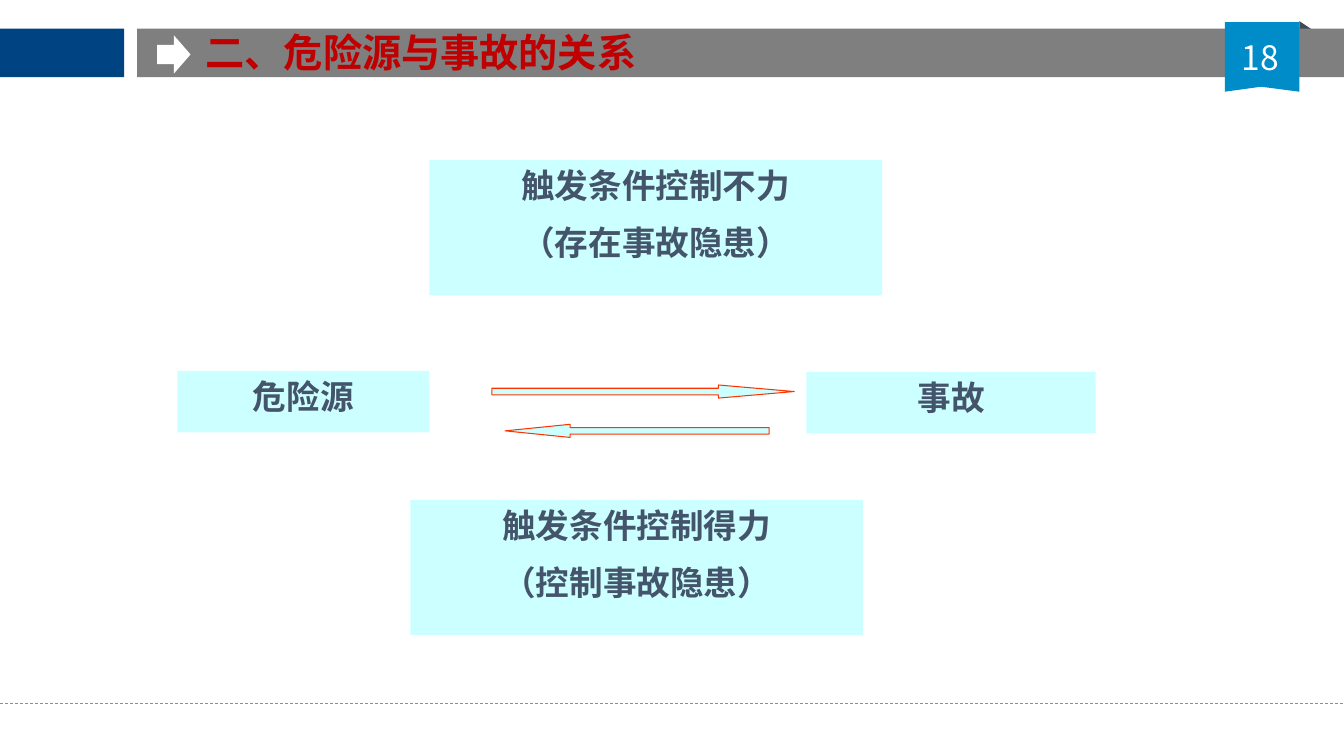
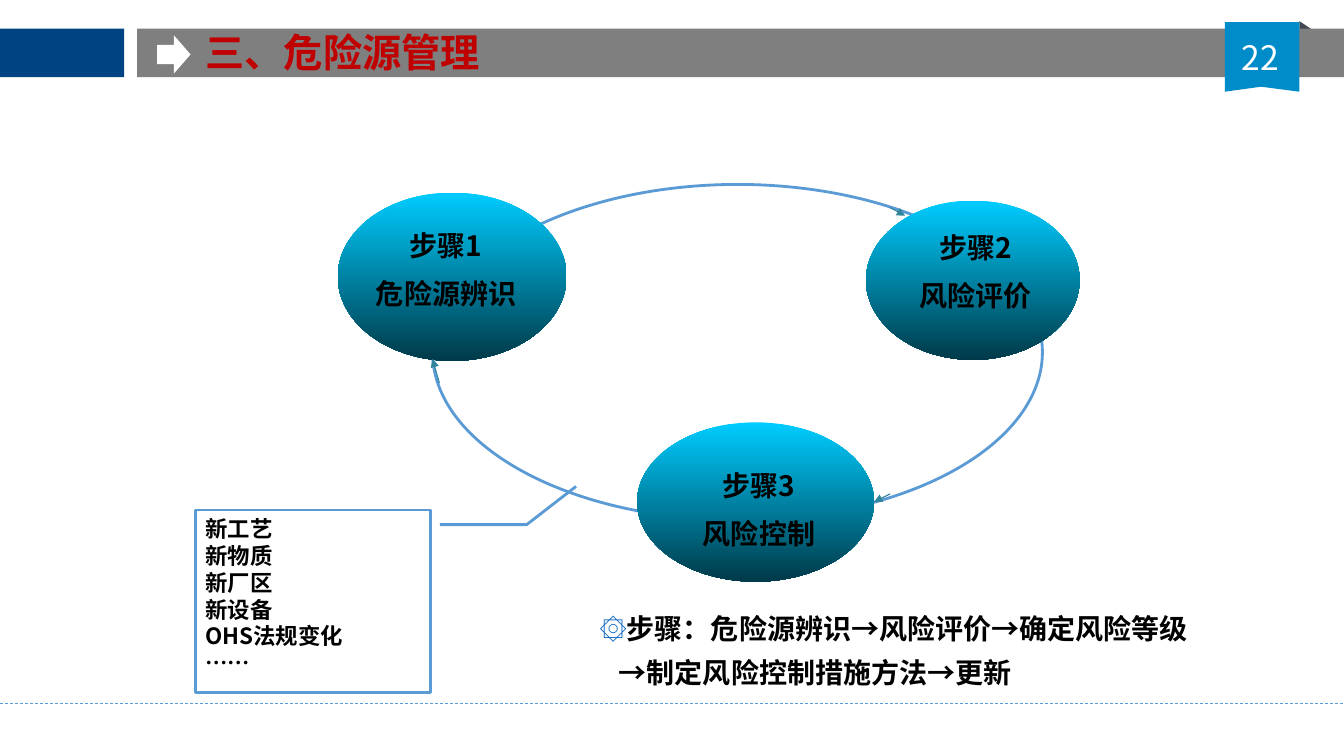
from lxml.etree import SubElement
from pptx import Presentation
from pptx.dml.color import RGBColor
from pptx.enum.dml import MSO_LINE_DASH_STYLE as Dash
from pptx.enum.shapes import MSO_CONNECTOR as Connector, MSO_SHAPE as Kind
from pptx.enum.text import MSO_ANCHOR as Anchor, MSO_AUTO_SIZE as AutoSize, PP_ALIGN as Align
from pptx.oxml.ns import qn
from pptx.util import Inches, Pt

COLORS = {name: RGBColor.from_string(value) for name, value in {
    "navy": "004383", "gray": "7F7F7F", "ribbon": "008CC8", "fold": "222A35",
    "white": "FFFFFF", "black": "000000", "title": "C00000", "slate": "44546A",
    "aqua": "CCFFFF", "orange": "FF3300", "blue": "5B9BD5", "teal": "31859C",
    "cyan": "00CCFF", "deep": "003A49", "bullet": "0563C1"}.items()}
CJK, LATIN = "Noto Sans CJK SC", "Calibri"

presentation = Presentation()
presentation.slide_width, presentation.slide_height = Inches(13.33), Inches(7.5)
# The grid has 100 columns and 100 rows
COLUMN, ROW = presentation.slide_width / 100, presentation.slide_height / 100


def add_block(slide, kind, box, fill=None, line=None, weight=0.75, adjustments=()):
    """Add a preset shape, or a text box when kind is None; box is in columns and rows."""
    frame = [int(part * unit) for part, unit in zip(box, (COLUMN, ROW) * 2)]
    if kind is None:
        return slide.shapes.add_textbox(*frame)
    shape = slide.shapes.add_shape(kind, *frame)
    shape.shadow.inherit = False
    for index, value in enumerate(adjustments):
        shape.adjustments[index] = value
    if fill:
        shape.fill.solid()
        shape.fill.fore_color.rgb = COLORS[fill]
    else:
        shape.fill.background()
    if line:
        shape.line.color.rgb = COLORS[line]
        shape.line.width = Pt(weight)
    else:
        shape.line.fill.background()
    return shape


def write(shape, text, size, color, align=Align.CENTER, bold=True, gap=0, font=CJK):
    """Fill a shape with one paragraph per line of text."""
    frame = shape.text_frame
    frame.text = text
    frame.word_wrap, frame.auto_size = True, AutoSize.NONE
    frame.vertical_anchor = Anchor.TOP
    for index, paragraph in enumerate(frame.paragraphs):
        paragraph.alignment = align
        paragraph.space_before = Pt(gap if index else 0)
        for run in paragraph.runs:
            run.font.name, run.font.size, run.font.bold = font, Pt(size), bold
            run.font.color.rgb = COLORS[color]
    for latin in list(shape.element.iter(qn("a:latin"))):
        SubElement(latin.getparent(), qn("a:ea"), typeface=CJK)


# Slides with title and page number
layout = presentation.slide_layouts[5]
slides = []
for title, page in [("二、危险源与事故的关系", "18"), ("三、危险源管理", "22")]:
    slide = presentation.slides.add_slide(layout)
    heading = slide.shapes.title
    heading.left, heading.top = int(14.55 * COLUMN), int(3.07 * ROW)
    heading.width, heading.height = int(75.83 * COLUMN), int(7.6 * ROW)
    write(heading, title, 28, "title", Align.LEFT)
    write(add_block(slide, None, (90.23, 4.27, 7.13, 5.33)), page, 24, "white", bold=False)
    slides.append(slide)
relation, management = slides

# Shared band, ribbon and footer line, moved to the layout
fold = add_block(relation, Kind.RIGHT_TRIANGLE, (96.68, 2.8, 0.9, 1.07), "fold")
SubElement(next(fold.element.iter(qn("a:srgbClr"))), qn("a:alpha"), val="85000")
decoration = [fold,
              add_block(relation, Kind.RECTANGLE, (0, 3.8, 9.23, 6.4), "navy"),
              add_block(relation, Kind.RECTANGLE, (10.2, 3.8, 89.8, 6.4), "gray")]
outline = [(int(x * COLUMN), int(y * ROW)) for x, y in
           [(91.13, 12.13), (91.13, 2.93), (96.68, 2.93), (96.68, 12.13), (93.83, 11.47)]]
builder = relation.shapes.build_freeform(*outline[0])
builder.add_line_segments(outline[1:], close=True)
ribbon = builder.convert_to_shape()
ribbon.shadow.inherit = False
ribbon.fill.solid()
ribbon.fill.fore_color.rgb = COLORS["ribbon"]
ribbon.line.fill.background()
pointer = add_block(relation, Kind.RIGHT_ARROW, (11.7, 4.67, 2.48, 5.07), "white")
footer = relation.shapes.add_connector(
    Connector.STRAIGHT, 0, int(93.07 * ROW), presentation.slide_width, int(93.07 * ROW))
footer.line.color.rgb = COLORS["blue"]
footer.line.width, footer.line.dash_style = Pt(0.5), Dash.DASH
SubElement(footer.element.spPr, qn("a:effectLst"))
for number, shape in enumerate(decoration + [ribbon, pointer, footer], start=101):
    next(shape.element.iter(qn("p:cNvPr"))).set("id", str(number))
    layout.shapes.element.append(shape.element)

# Hazard and accident: boxes and the two arrows between them
for text, box in [
        ("危险源", (13.2, 49.07, 18.75, 8.13)),
        ("事故", (60, 49.2, 21.53, 8.13)),
        ("触发条件控制不力\n（存在事故隐患）", (31.95, 21.2, 33.68, 17.87)),
        ("触发条件控制得力\n（控制事故隐患）", (30.53, 66.13, 33.68, 17.87))]:
    write(add_block(relation, Kind.RECTANGLE, box, "aqua"), text, 24, "slate", gap=12)
for kind, box, head in [(Kind.LEFT_ARROW, (37.58, 56.13, 19.65, 1.73), 4.96),
                        (Kind.RIGHT_ARROW, (36.6, 50.93, 22.5, 1.73), 5.79)]:
    add_block(relation, kind, box, "aqua", "orange", adjustments=(0.5, head))

# Management cycle: ring, step ellipses and their labels
add_block(management, Kind.OVAL, (32.18, 24.4, 45.38, 44.4), line="blue", weight=2)
for text, ellipse_box, label_box in [
        ("步骤3\n风险控制", (47.4, 55.87, 17.63, 21.07), (48.08, 61.33, 16.8, 12.53)),
        ("步骤2\n风险评价", (64.43, 26.53, 15.9, 21.07), (64.2, 29.87, 16.8, 12.53)),
        ("步骤1\n危险源辨识", (25.13, 25.47, 17.03, 22.27), (25.13, 29.6, 16.13, 12.53))]:
    ellipse = add_block(management, Kind.OVAL, ellipse_box)
    ellipse.fill.gradient()
    ellipse.fill.gradient_angle = 270
    for stop, position, color in zip(ellipse.fill.gradient_stops, (0, 1), ("cyan", "deep")):
        stop.position = position
        stop.color.rgb = COLORS[color]
    write(add_block(management, None, label_box), text, 20, "black", gap=10)

# Arrowheads along the ring
for start_x, start_y, end_x, end_y in [(32.7, 50.67, 32.18, 47.47),
                                       (66.23, 65.33, 65.03, 66.4),
                                       (66.23, 27.47, 67.35, 28.53)]:
    arrow = management.shapes.add_connector(
        Connector.STRAIGHT, int(start_x * COLUMN), int(start_y * ROW),
        int(end_x * COLUMN), int(end_y * ROW))
    arrow.line.color.rgb = COLORS["teal"]
    arrow.line.width = Pt(0.75)
    SubElement(arrow.element.spPr.find(qn("a:ln")), qn("a:tailEnd"), type="triangle")
    SubElement(arrow.element.spPr, qn("a:effectLst"))

# Step summary; its bullet needs a text font so that the symbol is drawn
summary = add_block(management, None, (43.88, 78.93, 45.38, 12.53))
write(summary, "步骤：危险源辨识→风险评价→确定风险等级→制定风险控制措施方法→更新",
      20, "black", Align.LEFT, font=LATIN)
paragraph = summary.text_frame.paragraphs[0]
paragraph.line_spacing = 1.3
properties = next(summary.element.iter(qn("a:pPr")))
properties.set("marL", str(Inches(0.19)))
properties.set("indent", str(-Inches(0.19)))
bullet_color = SubElement(properties, qn("a:buClr"))
SubElement(bullet_color, qn("a:srgbClr"), val=str(COLORS["bullet"]))
SubElement(properties, qn("a:buFont"), typeface=LATIN)
SubElement(properties, qn("a:buChar"), char="۞")

# Callout with the reasons for an update
callout = add_block(management, Kind.LINE_CALLOUT_2, (14.55, 67.47, 17.48, 24.13),
                    line="blue", weight=2,
                    adjustments=(0.08, 1.04, 0.08, 1.41, -0.13, 1.62))
write(callout, "新工艺\n新物质\n新厂区\n新设备\nOHS法规变化\n……", 16, "black", Align.LEFT)

presentation.save("out.pptx")
